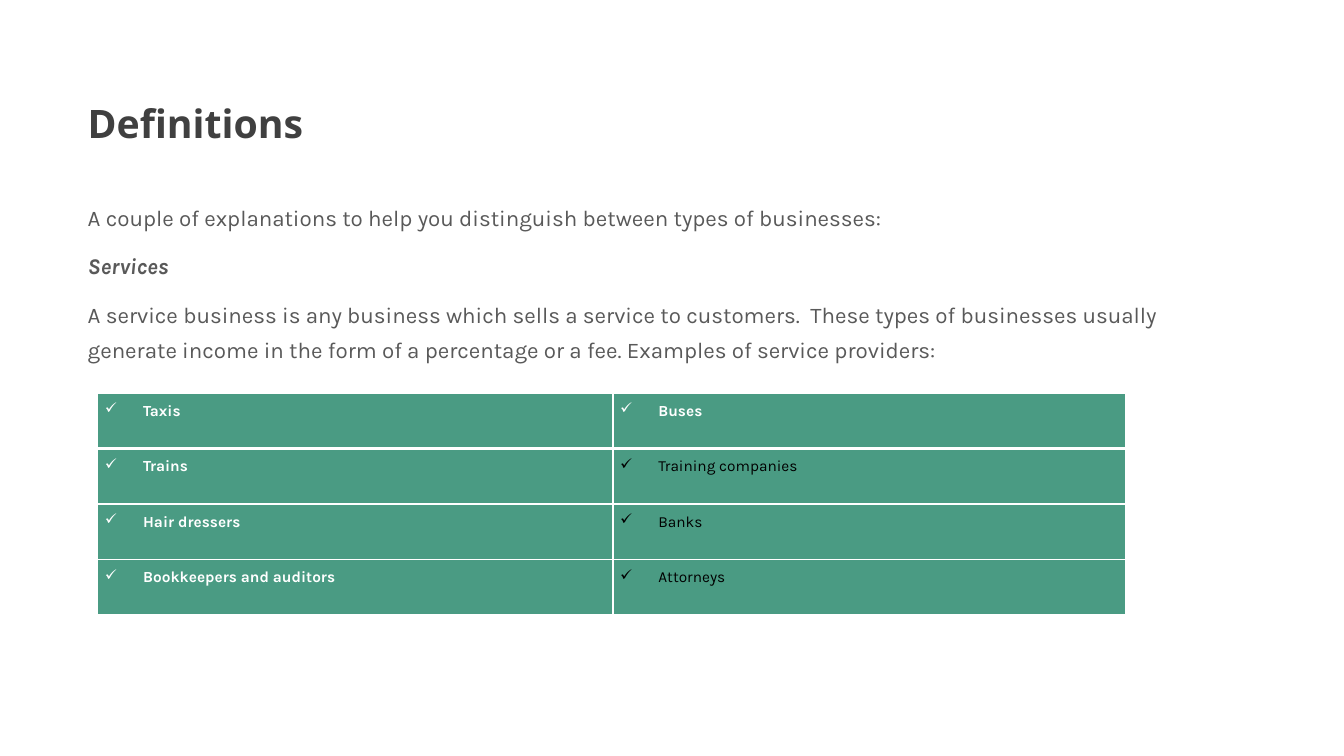
import pptx
import pptx.util
import pptx.dml.color
import pptx.enum.text
from dataclasses import dataclass
from lxml import etree

TITLE = "Definitions"
BODY = [
    ("A couple of explanations to help you distinguish between types of businesses:", False),
    ("Services", True),
    ("A service business is any business which sells a service to customers.  These types of "
     "businesses usually generate income in the form of a percentage or a fee. "
     "Examples of service providers:", False),
]
PROVIDERS = [
    ("Taxis", "Buses"),
    ("Trains", "Training companies"),
    ("Hair dressers", "Banks"),
    ("Bookkeepers and auditors", "Attorneys"),
]
TITLE_AREA = (0.77, 0.6, 10.66, 1.39)
BODY_AREA = (0.77, 1.89, 10.85, 5.15)
TABLE_ORIGIN = (0.97, 3.9)
COLUMN_WIDTHS = (5.11, 5.08)
ROW_HEIGHT = 0.55


@dataclass(frozen=True)
class Theme:
    title_font: str = "Open Sans"
    text_font: str = "Karla"
    title_size: int = 28
    body_size: int = 16
    cell_size: int = 11
    title_color: str = "404040"
    body_color: str = "595959"
    cell_fill: str = "4A9B83"
    light: str = "FFFFFF"
    dark: str = "000000"


THEME = Theme()
Inches = pptx.util.Inches
Pt = pptx.util.Pt


def color(value):
    return pptx.dml.color.RGBColor.from_string(value)


def tag(name):
    return pptx.oxml.ns.qn("a:" + name)


def style(para, name, size, value, bold=False, italic=False):
    para.alignment = pptx.enum.text.PP_ALIGN.LEFT
    for span in para.runs:
        span.font.name = name
        span.font.size = Pt(size)
        span.font.color.rgb = color(value)
        span.font.bold = bold
        span.font.italic = italic


def indent(para, left, first):
    properties = para._p.get_or_add_pPr()
    properties.set("marL", str(Inches(left)))
    properties.set("indent", str(Inches(first)))
    return properties


def place(box, area):
    box.left, box.top, box.width, box.height = map(Inches, area)
    box.text_frame.word_wrap = True
    box.text_frame.auto_size = pptx.enum.text.MSO_AUTO_SIZE.NONE


def add_title(page):
    box = page.shapes.title
    place(box, TITLE_AREA)
    frame = box.text_frame
    frame.text = TITLE
    frame.vertical_anchor = pptx.enum.text.MSO_ANCHOR.BOTTOM
    frame.margin_bottom = Inches(0.53)
    para = frame.paragraphs[0]
    para.line_spacing = 0.9
    style(para, THEME.title_font, THEME.title_size, THEME.title_color, bold=True)


def add_body(page):
    box = page.placeholders[1]
    place(box, BODY_AREA)
    frame = box.text_frame
    frame.vertical_anchor = pptx.enum.text.MSO_ANCHOR.TOP
    frame.text = "\n".join(text for text, _ in BODY)
    for index, (para, (_, heading)) in enumerate(zip(frame.paragraphs, BODY)):
        etree.SubElement(indent(para, 0, 0), tag("buNone"))
        para.line_spacing = 1.3
        para.space_before = Pt(10 if index else 0)
        style(para, THEME.text_font, THEME.body_size, THEME.body_color, heading, heading)


def set_borders(cell, row):
    properties = cell._tc.get_or_add_tcPr()
    widths = {"lnL": 1, "lnR": 1, "lnT": 3 if row == 1 else 1, "lnB": 3 if row == 0 else 1}
    for position, (side, width) in enumerate(widths.items()):
        line = etree.Element(tag(side), w=str(Pt(width)))
        fill = etree.SubElement(line, tag("solidFill"))
        etree.SubElement(fill, tag("srgbClr"), val=THEME.light)
        properties.insert(position, line)


def fill_cell(cell, text, row, column):
    cell.fill.solid()
    cell.fill.fore_color.rgb = color(THEME.cell_fill)
    set_borders(cell, row)
    cell.margin_left = cell.margin_right = Inches(0.07)
    cell.margin_top = cell.margin_bottom = 0
    cell.text = text
    para = cell.text_frame.paragraphs[0]
    properties = indent(para, 0.38, -0.38)
    etree.SubElement(properties, tag("buChar"), char="✓")
    tabs = etree.SubElement(properties, tag("tabLst"))
    etree.SubElement(tabs, tag("tab"), pos=str(Inches(0.5)), algn="l")
    para.line_spacing = 1.5
    emphasized = row == 0 or column == 0
    style(para, THEME.text_font, THEME.cell_size,
          THEME.light if emphasized else THEME.dark, bold=emphasized)


def add_providers(page):
    size = (sum(COLUMN_WIDTHS), ROW_HEIGHT * len(PROVIDERS))
    table = page.shapes.add_table(
        len(PROVIDERS), len(COLUMN_WIDTHS), *map(Inches, TABLE_ORIGIN + size)).table
    table.horz_banding = False
    for column, width in zip(table.columns, COLUMN_WIDTHS):
        column.width = Inches(width)
    for row, texts in enumerate(PROVIDERS):
        table.rows[row].height = Inches(ROW_HEIGHT)
        for column, text in enumerate(texts):
            fill_cell(table.cell(row, column), text, row, column)


def main():
    deck = pptx.Presentation()
    deck.slide_width, deck.slide_height = Inches(13.33), Inches(7.5)
    page = deck.slides.add_slide(deck.slide_layouts[1])
    add_body(page)
    add_title(page)
    add_providers(page)
    deck.save("out.pptx")


if __name__ == "__main__":
    main()
